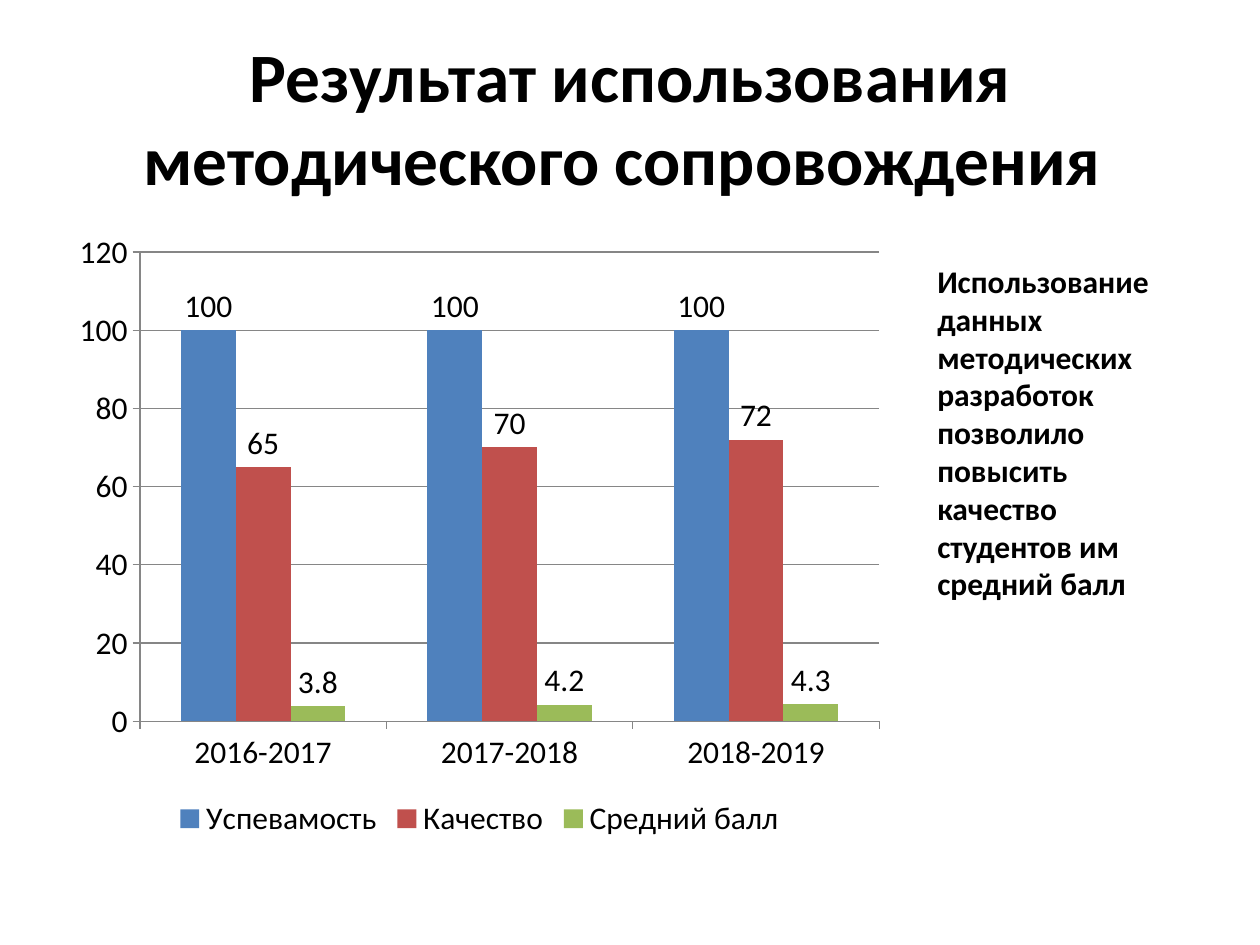
from typing import NamedTuple

from pptx import Presentation
from pptx.chart.data import CategoryChartData
from pptx.dml.color import RGBColor
from pptx.enum import chart as ch, text
from pptx.util import Inches, Pt

FONT = "Calibri"
COLORS = {
    "text": "000000",
    "axis": "868686",
    "progress": "4F81BD",
    "quality": "C0504D",
    "average": "9BBB59",
}
YEARS = ["2016-2017", "2017-2018", "2018-2019"]


class Box(NamedTuple):
    left: float
    top: float
    width: float
    height: float

    def lengths(self) -> list:
        return [Inches(value) for value in self]


class Measure(NamedTuple):
    name: str
    values: tuple
    color: str


MEASURES = [
    Measure("Успевамость", (100, 100, 100), "progress"),
    Measure("Качество", (65, 70, 72), "quality"),
    Measure("Средний балл", (3.8, 4.2, 4.3), "average"),
]


def rgb(name: str) -> RGBColor:
    return RGBColor.from_string(COLORS[name])


def style_font(font, size: float, bold: bool = False) -> None:
    font.name = FONT
    font.size = Pt(size)
    font.bold = bold
    font.color.rgb = rgb("text")


def add_bold_text(slide, box: Box, wording: str, size: float,
                  align=text.PP_ALIGN.LEFT, anchor=text.MSO_ANCHOR.TOP) -> None:
    frame = slide.shapes.add_textbox(*box.lengths()).text_frame
    frame.word_wrap = True
    frame.vertical_anchor = anchor
    paragraph = frame.paragraphs[0]
    paragraph.text = wording
    paragraph.alignment = align
    style_font(paragraph.font, size, bold=True)


def style_axis(axis) -> None:
    axis.major_tick_mark = ch.XL_TICK_MARK.OUTSIDE
    axis.minor_tick_mark = ch.XL_TICK_MARK.NONE
    axis.format.line.color.rgb = rgb("axis")
    axis.format.line.width = Pt(0.75)


def add_results_chart(slide, box: Box) -> None:
    data = CategoryChartData()
    data.categories = YEARS
    for measure in MEASURES:
        data.add_series(measure.name, measure.values)
    results = slide.shapes.add_chart(
        ch.XL_CHART_TYPE.COLUMN_CLUSTERED, *box.lengths(), data).chart
    style_font(results.font, 18)
    results.has_title = False
    results.has_legend = True
    results.legend.position = ch.XL_LEGEND_POSITION.BOTTOM
    results.legend.include_in_layout = False

    style_axis(results.category_axis)
    style_axis(results.value_axis)
    results.value_axis.minimum_scale = 0
    results.value_axis.maximum_scale = 120
    results.value_axis.major_unit = 20
    gridlines = results.value_axis.major_gridlines.format.line
    gridlines.color.rgb = rgb("axis")
    gridlines.width = Pt(0.75)

    plot = results.plots[0]
    plot.vary_by_categories = False
    plot.gap_width = 150
    plot.overlap = 0
    for series, measure in zip(plot.series, MEASURES):
        series.format.fill.solid()
        series.format.fill.fore_color.rgb = rgb(measure.color)
        series.data_labels.show_value = True
        series.data_labels.position = ch.XL_LABEL_POSITION.OUTSIDE_END


def main() -> None:
    deck = Presentation()
    deck.slide_width, deck.slide_height = Inches(10), Inches(7.5)
    slide = deck.slides.add_slide(deck.slide_layouts[6])
    add_bold_text(slide, Box(0.5, 0.3, 9, 1.25),
                  "Результат использования методического сопровождения ", 39.6,
                  text.PP_ALIGN.CENTER, text.MSO_ANCHOR.MIDDLE)
    add_results_chart(slide, Box(0.5, 1.75, 6.61, 4.95))
    add_bold_text(slide, Box(7.34, 2.03, 2.19, 2.83),
                  "Использование данных методических разработок позволило "
                  "повысить качество студентов им средний балл", 18)
    deck.save("out.pptx")


if __name__ == "__main__":
    main()
